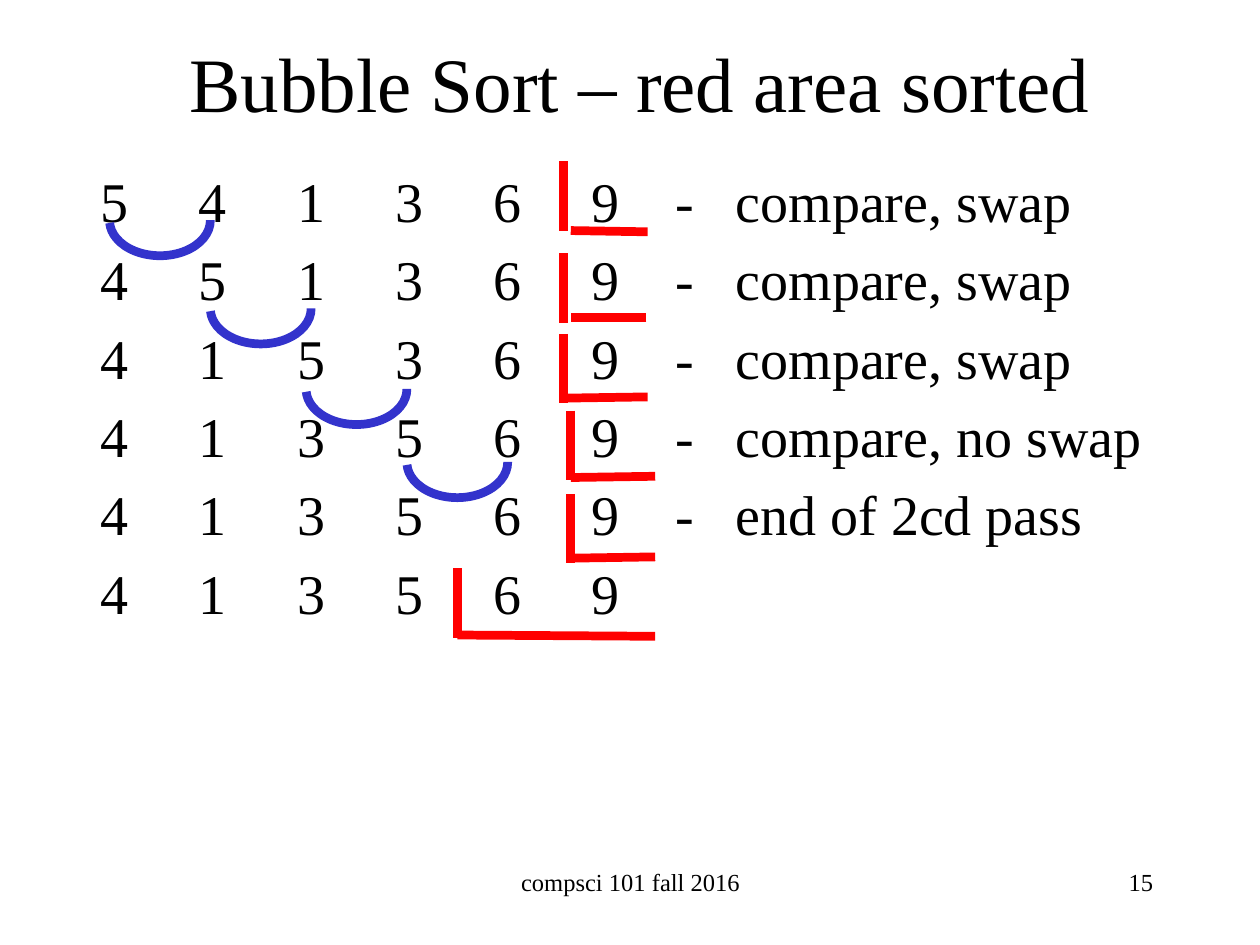
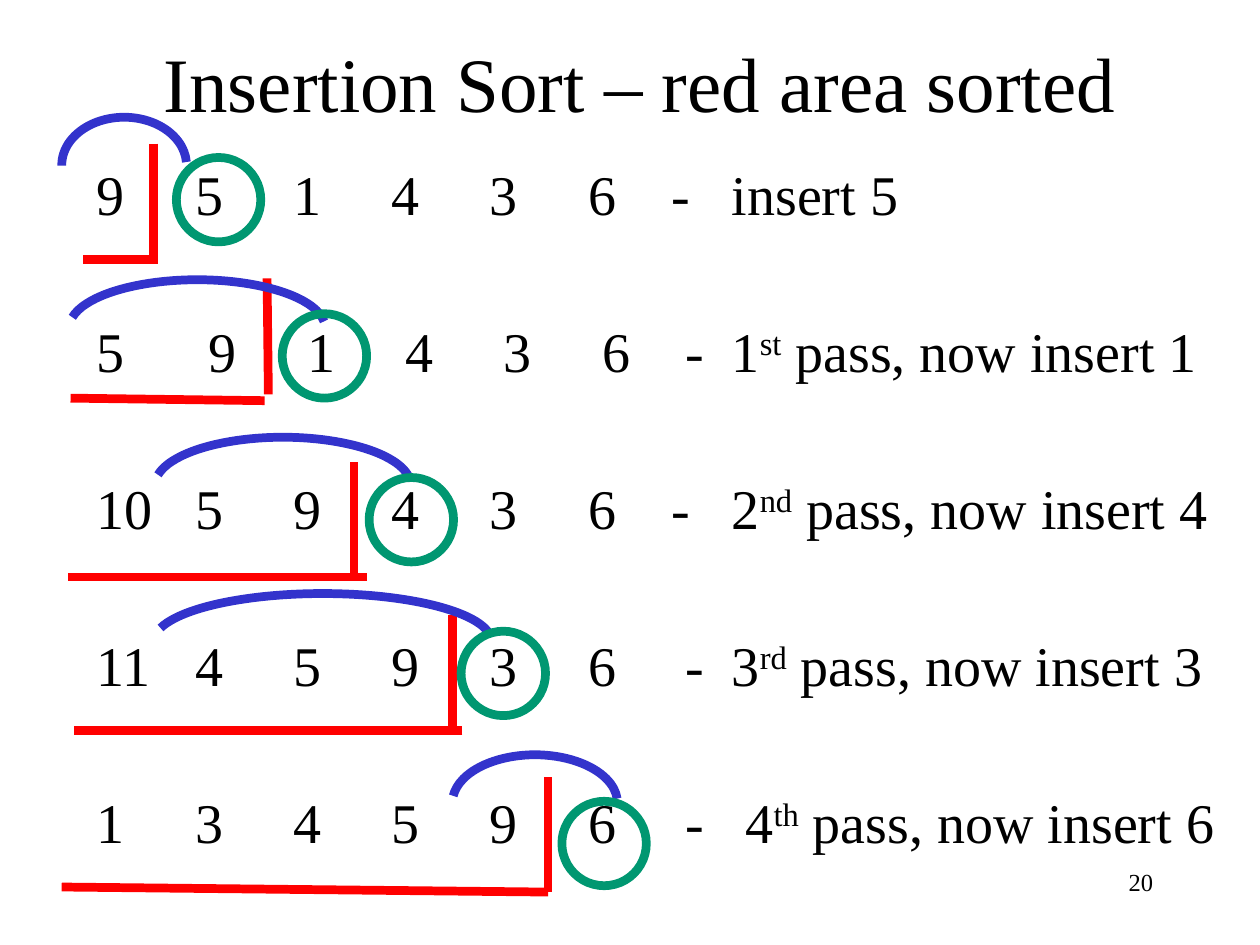
"""Builds two slides that trace bubble sort and insertion sort."""
from lxml import etree
from pptx import Presentation
from pptx.dml.color import RGBColor
from pptx.enum.shapes import MSO_CONNECTOR as CONN, MSO_SHAPE as SHAPE
from pptx.enum.text import MSO_ANCHOR as ANCHOR, PP_ALIGN as ALIGN
from pptx.oxml.ns import qn
from pptx.util import Inches, Pt

COLORS = {"text": "000000", "sorted": "FF0000", "move": "3333CC", "pick": "009771"}
FONT = "Times New Roman"
STEP, DASH, NOTE = 0.78, 4.56, 5.04
FLAT_ARC, WIDE_ARC = (215.73, 106.31), (2.84, 106.31)


class Deck:
    """Holds the style and the current slide."""

    def __init__(self):
        self.prs = Presentation()
        self.prs.slide_width, self.prs.slide_height = Inches(10), Inches(7.5)

    def slide(self, title, number, footer=None):
        self.s = self.prs.slides.add_slide(self.prs.slide_layouts[6])
        self.text((0.83, 0.02, 8.5, 1.25), title, 44, ALIGN.CENTER, ANCHOR.MIDDLE)
        if footer:
            self.text((3.42, 6.83, 3.17, 0.5), footer, 14, ALIGN.CENTER)
        self.text((7.17, 6.83, 2.08, 0.5), number, 14, ALIGN.RIGHT)

    def frame(self, box, anchor=ANCHOR.TOP):
        tf = self.s.shapes.add_textbox(*map(Inches, box)).text_frame
        tf.word_wrap, tf.vertical_anchor = True, anchor
        return tf

    def run(self, p, text, size, raised=False):
        r = p.add_run()
        r.text = text
        r.font.size, r.font.name = Pt(size), FONT
        r.font.color.rgb = RGBColor.from_string(COLORS["text"])
        if raised:
            r._r.get_or_add_rPr().set("baseline", "30000")

    def text(self, box, text, size, align, anchor=ANCHOR.TOP):
        p = self.frame(box, anchor).paragraphs[0]
        p.alignment = align
        self.run(p, text, size)

    def rows(self, box, rows, gap):
        """Rows hold digits, a note with ^raised^ parts, and three tab shifts."""
        tf = self.frame(box)
        for i, (digits, note, shifts) in enumerate(rows):
            p = tf.add_paragraph() if i else tf.paragraphs[0]
            p.space_before = Pt(gap if i else 0)
            first, dash, end = shifts
            stops = [STEP * n + first for n in range(1, 6)] + [DASH + dash, NOTE + end]
            tabs = etree.SubElement(p._p.get_or_add_pPr(), qn("a:tabLst"))
            for stop in stops:
                etree.SubElement(tabs, qn("a:tab"), pos=str(Inches(stop)), algn="l")
            line = "\t".join(digits.split() + (["-", note] if note else []))
            for n, part in enumerate(line.split("^")):
                self.run(p, part, 32, n % 2 == 1)

    def stroke(self, shape, color):
        shape.line.color.rgb = RGBColor.from_string(COLORS[color])
        shape.line.width = Pt(5)

    def outline(self, kind, box, color):
        sp = self.s.shapes.add_shape(kind, *map(Inches, box))
        sp.shadow.inherit = False
        sp.fill.background()
        self.stroke(sp, color)
        return sp

    def arc(self, box, angles, rotation=0):
        sp = self.outline(SHAPE.ARC, box, "move")
        sp.adjustments[0], sp.adjustments[1] = angles
        sp.rotation = rotation

    def circle(self, x, y):
        self.outline(SHAPE.OVAL, (x, y, 0.67, 0.67), "pick")

    def line(self, *ends):
        c = self.s.shapes.add_connector(CONN.STRAIGHT, *map(Inches, ends))
        self.stroke(c, "sorted")
        etree.SubElement(c._element.spPr, qn("a:effectLst"))


def bubble_sort(deck):
    deck.slide("Bubble Sort – red area sorted", "15", "compsci 101 fall 2016")
    even = (0, 0, 0)
    deck.rows((0.7, 1.27, 9, 5.92), [
        ("5 4 1 3 6 9", "compare, swap", even),
        ("4 5 1 3 6 9", "compare, swap", even),
        ("4 1 5 3 6 9", "compare, swap", even),
        ("4 1 3 5 6 9", "compare, no swap", even),
        ("4 1 3 5 6 9", "end of 2cd pass", even),
        ("4 1 3 5 6 9", "", even),
    ], 6.4)
    for x, y in [(0.87, 1.47), (1.67, 2.17), (2.43, 2.81), (3.23, 3.39)]:
        deck.arc((x, y, 0.8, 0.56), FLAT_ARC)
    for x, top, base in [
        (4.47, 1.28, (5.14, 1.84, 4.53, 1.83)),
        (4.47, 2.01, (5.13, 2.52, 4.53, 2.52)),
        (4.47, 2.65, (5.14, 3.15, 4.47, 3.16)),
        (4.53, 3.26, (5.2, 3.78, 4.53, 3.79)),
        (4.53, 3.92, (5.2, 4.42, 4.53, 4.43)),
        (3.63, 4.51, (5.2, 5.05, 3.63, 5.04)),
    ]:
        deck.line(x, top, x, top + 0.55)
        deck.line(*base)


def insertion_sort(deck):
    deck.slide("Insertion Sort – red area sorted", "20")
    deck.rows((0.67, 1.22, 9.33, 5.81), [
        ("9 5 1 4 3 6", "insert 5", (0, 0, 0)),
        ("5 9 1 4 3 6", "1^st^ pass, now insert 1", (0.11, 0.11, 0)),
        ("10 5 9 4 3 6", "2^nd^ pass, now insert 4", (0, 0, 0)),
        ("11 4 5 9 3 6", "3^rd^ pass, now insert 3", (0, 0.11, 0)),
        ("1 3 4 5 9 6", "4^th^ pass, now insert 6", (0, 0.11, 0.11)),
    ], 51.2)
    for side, base, arc, angles, pick in [
        ((1.22, 1.14, 1.22, 2.06), (1.25, 2.06, 0.66, 2.06),
         (0.49, 0.93, 0.99, 0.76), FLAT_ARC, (1.4, 1.25)),
        ((2.12, 2.21, 2.13, 3.13), (2.1, 3.18, 0.56, 3.16),
         (0.55, 2.22, 2.03, 0.76), WIDE_ARC, (2.24, 2.49)),
        ((2.81, 3.67, 2.81, 4.58), (2.91, 4.58, 0.54, 4.58),
         (1.23, 3.47, 2.03, 0.76), WIDE_ARC, (2.93, 3.79)),
        ((3.59, 4.88, 3.59, 5.8), (3.67, 5.8, 0.59, 5.8),
         (1.22, 4.71, 2.68, 0.76), WIDE_ARC, (3.66, 5.01)),
        ((4.35, 6.17, 4.35, 7.08), (4.35, 7.08, 0.49, 7.04),
         (3.59, 5.99, 1.31, 0.76), WIDE_ARC, (4.46, 6.36)),
    ]:
        deck.line(*side)
        deck.line(*base)
        deck.arc(arc, angles, 180)
        deck.circle(*pick)


def main():
    deck = Deck()
    bubble_sort(deck)
    insertion_sort(deck)
    deck.prs.save("out.pptx")


if __name__ == "__main__":
    main()
